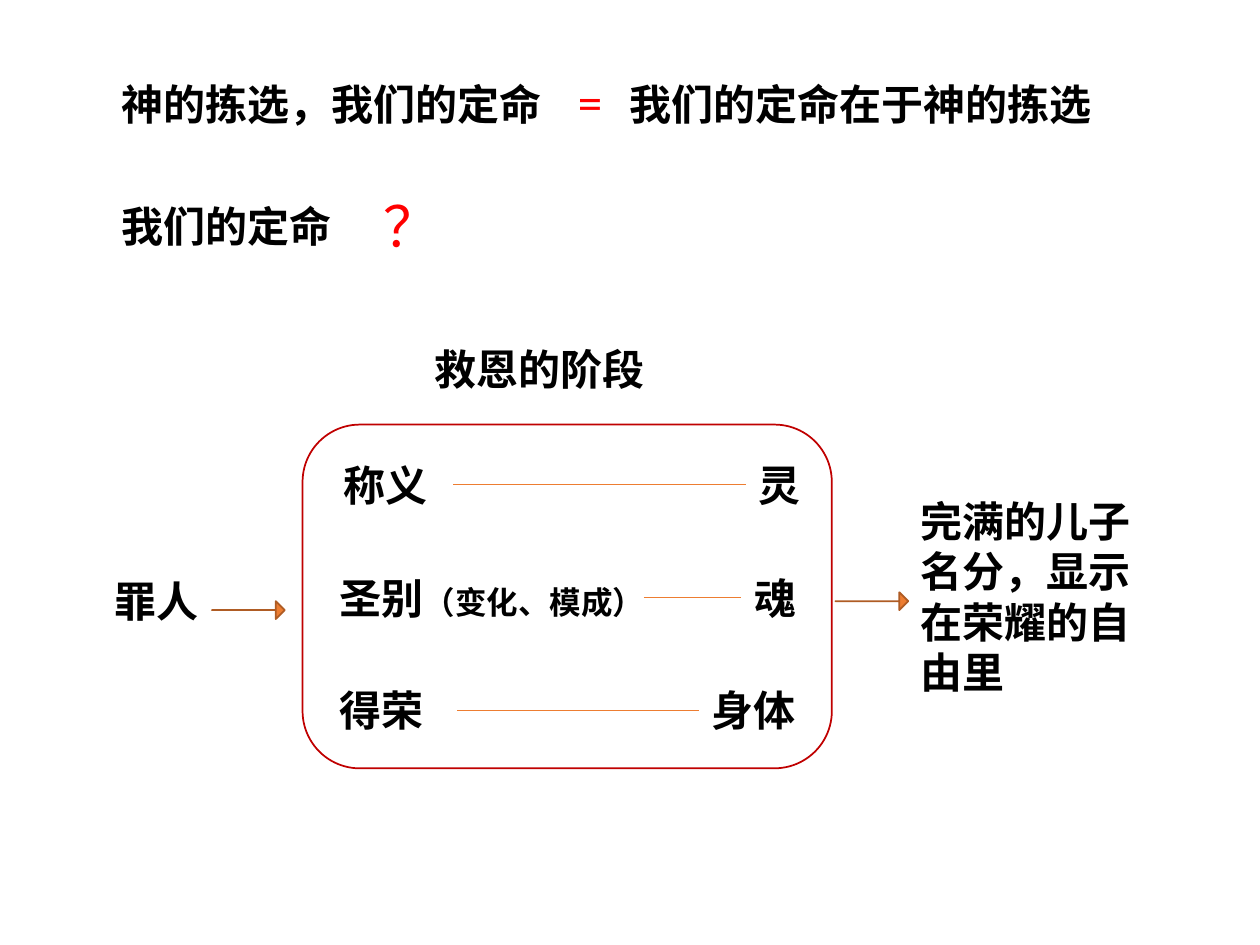
from pptx import Presentation
from pptx.dml.color import RGBColor
from pptx.enum.shapes import MSO_CONNECTOR as CONN, MSO_SHAPE as SHAPE
from pptx.enum.text import MSO_AUTO_SIZE as AUTO
from pptx.oxml.ns import qn
from pptx.util import Cm, Pt
from lxml.etree import SubElement

BLACK, RED, DARK_RED = "000000", "FF0000", "C00000"
ORANGE, BROWN = "ED7D31", "AF5C24"
BODY = dict(name="Calibri", size=Pt(24), bold=True)
SMALL = dict(BODY, size=Pt(18))
EQUALS = dict(BODY, size=Pt(28), bold=False)
QUESTION = dict(BODY, size=Pt(32), bold=False)
LINE_H = 1.27

# left, top, width, height (cm), wrap, text, format, colour
LABELS = [
    (2.21, 1.45, 9.02, LINE_H, False, "神的拣选，我们的定命", BODY, BLACK),
    (11.4, 1.32, 0.99, 1.45, False, "=", EQUALS, RED),
    (12.45, 1.45, 9.86, LINE_H, False, "我们的定命在于神的拣选", BODY, BLACK),
    (2.21, 3.91, 4.75, LINE_H, False, "我们的定命", BODY, BLACK),
    (7.49, 3.73, 1.63, 1.63, False, "？", QUESTION, RED),
    (8.51, 6.81, 4.75, LINE_H, False, "救恩的阶段", BODY, BLACK),
    (2.06, 11.48, 2.21, LINE_H, False, "罪人", BODY, BLACK),
    (18.31, 9.86, 4.78, 4.37, True, "完满的儿子名分，显示在荣耀的自由里", BODY, BLACK),
]

# stage (left, width), note, line (from, to), part (left, width)
STAGES = [
    ("称义", (6.68, 3.61), "", (9.14, 15.04), "灵", (15.04, 1.04)),
    ("圣别", (6.6, 6.68), "（变化、模成）", (12.98, 14.94), "魂", (14.96, 1.35)),
    ("得荣", (6.6, 3.43), "", (9.22, 14.1), "身体", (14.1, 2.21)),
]
STAGE_TOP, STAGE_STEP = 9.14, 2.27
FRAME = (6.1, 8.56, 10.67, 6.93)
ARROWS = [(4.27, 12.12), (16.84, 11.94)]
ARROW_SIZE = (1.47, 0.36)


def rgb(value):
    return RGBColor.from_string(value)


def add_label(s, left, top, width, height, wrap, runs):
    """Add a text box; runs are (text, format, colour)."""
    tf = s.shapes.add_textbox(Cm(left), Cm(top), Cm(width), Cm(height)).text_frame
    tf.word_wrap = wrap
    tf.auto_size = AUTO.SHAPE_TO_FIT_TEXT
    p = tf.paragraphs[0]
    for text, fmt, color in runs:
        r = p.add_run()
        r.text = text
        for key, value in fmt.items():
            setattr(r.font, key, value)
        r.font.color.rgb = rgb(color)


def add_outlined(s, kind, box, line, fill=None):
    sp = s.shapes.add_shape(kind, *map(Cm, box))
    sp.shadow.inherit = False
    if fill:
        sp.fill.solid()
        sp.fill.fore_color.rgb = rgb(fill)
    else:
        sp.fill.background()
    sp.line.color.rgb = rgb(line)
    sp.line.width = Pt(1)
    return sp


def add_link(s, start, end, y):
    line = s.shapes.add_connector(CONN.STRAIGHT, Cm(start), Cm(y), Cm(end), Cm(y))
    line.line.color.rgb = rgb(ORANGE)
    line.line.width = Pt(0.5)
    SubElement(line._element.spPr, qn("a:effectLst"))


def main():
    prs = Presentation()
    prs.slide_width, prs.slide_height = Cm(25.4), Cm(19.05)
    s = prs.slides.add_slide(prs.slide_layouts[6])

    for *box, text, fmt, color in LABELS:
        add_label(s, *box, [(text, fmt, color)])

    for i, (stage, (left, width), note, link, part, (part_left, part_width)) in enumerate(STAGES):
        top = STAGE_TOP + i * STAGE_STEP
        runs = [(stage, BODY, BLACK)]
        if note:
            runs.append((note, SMALL, BLACK))
        add_label(s, left, top, width, LINE_H, False, runs)
        add_label(s, part_left, top, part_width, LINE_H, False, [(part, BODY, BLACK)])
        add_link(s, *link, top + LINE_H / 2)

    add_outlined(s, SHAPE.ROUNDED_RECTANGLE, FRAME, DARK_RED)
    for position in ARROWS:
        arrow = add_outlined(s, SHAPE.RIGHT_ARROW, position + ARROW_SIZE, BROWN, ORANGE)
        arrow.adjustments[0] = 0

    prs.save("out.pptx")


if __name__ == "__main__":
    main()
